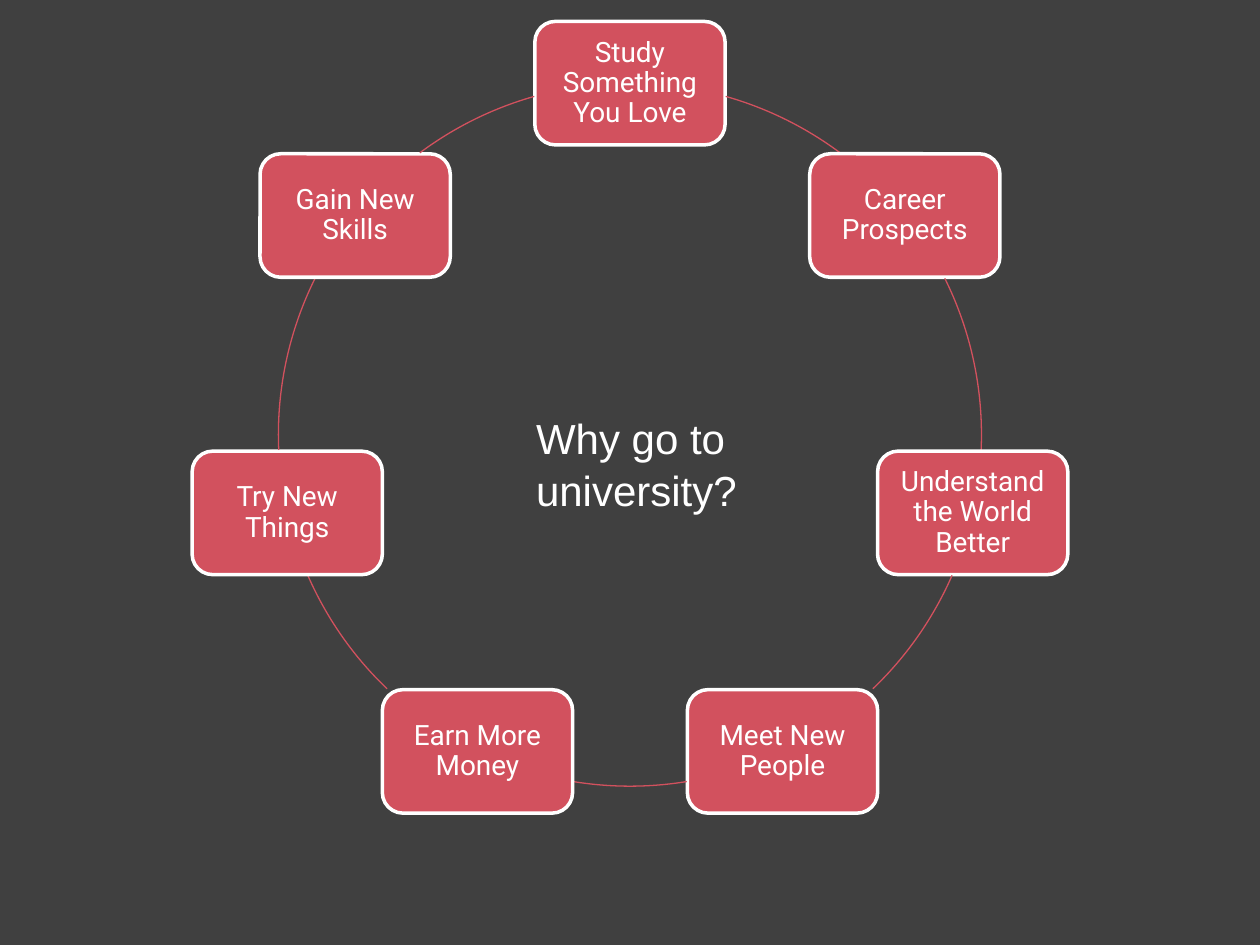
import math

from pptx import Presentation
from pptx import util as u
from pptx.dml.color import RGBColor
from pptx.enum import shapes, text

COLORS = {"back": "404040", "accent": "D2515E", "white": "FFFFFF"}
CENTER_X, CENTER_Y, RADIUS = 5, 3.45, 2.79
BOX_W, BOX_H = 1.51, 0.98
REASONS = [
    "Study Something You Love",
    "Career Prospects",
    "Understand the World Better",
    "Meet New People",
    "Earn More Money",
    "Try New Things",
    "Gain New Skills",
]
RIGHT_ARCS = [(285.8, 306.7), (333.6, 2.5), (23.6, 46.3)]
BOTTOM_ARC = (80.7, 99.3)
LEFT_ARCS = [((180 - b) % 360, (180 - a) % 360) for a, b in reversed(RIGHT_ARCS)]
ARCS = RIGHT_ARCS + [BOTTOM_ARC] + LEFT_ARCS


def color(name):
    return RGBColor.from_string(COLORS[name])


def apply(target, values):
    for name, value in values.items():
        setattr(target, name, value)


class Deck:
    box_font = {"name": "Roboto", "size": u.Pt(16)}
    title_font = {"name": "Arial", "size": u.Pt(24)}

    def __init__(self, width, height):
        self.prs = Presentation()
        apply(self.prs, {"slide_width": u.Inches(width), "slide_height": u.Inches(height)})
        self.s = self.prs.slides.add_slide(self.prs.slide_layouts[6])

    def shape(self, kind, x, y, w, h, fill=None, line=None, weight=0.75):
        sp = self.s.shapes.add_shape(kind, *map(u.Inches, (x, y, w, h)))
        sp.shadow.inherit = False
        if fill:
            sp.fill.solid()
            sp.fill.fore_color.rgb = color(fill)
        else:
            sp.fill.background()
        if line:
            sp.line.color.rgb = color(line)
            sp.line.width = u.Pt(weight)
        else:
            sp.line.fill.background()
        return sp

    def label(self, sp, words, font, spacing, inset, anchor, wrap):
        tf = sp.text_frame
        sides = ("left", "top", "right", "bottom")
        apply(tf, {f"margin_{side}": u.Inches(inset) for side in sides})
        apply(tf, {"word_wrap": wrap, "vertical_anchor": anchor})
        tf.text = words
        p = tf.paragraphs[0]
        apply(p, {"alignment": text.PP_ALIGN.CENTER, "line_spacing": spacing})
        for r in p.runs:
            apply(r.font, font)
            r.font.color.rgb = color("white")

    def box(self, words, x, y):
        sp = self.shape(shapes.MSO_SHAPE.ROUNDED_RECTANGLE, x - BOX_W / 2, y - BOX_H / 2,
                        BOX_W, BOX_H, "accent", "white", 2)
        self.label(sp, words, self.box_font, 0.9, 0.12, text.MSO_ANCHOR.MIDDLE, True)

    def arc(self, start, end):
        sp = self.shape(shapes.MSO_SHAPE.ARC, CENTER_X - RADIUS, CENTER_Y - RADIUS,
                        2 * RADIUS, 2 * RADIUS, line="accent")
        for i, angle in enumerate((start, end)):
            sp.adjustments[i] = angle * 0.6

    def title(self, words, x, y, w, h):
        sp = self.s.shapes.add_textbox(*map(u.Inches, (x, y, w, h)))
        self.label(sp, words, self.title_font, 1.05, 0, text.MSO_ANCHOR.BOTTOM, False)


def main():
    deck = Deck(10, 7.5)
    deck.shape(shapes.MSO_SHAPE.RECTANGLE, 0, 0, 10, 7.5, "back")
    for i, (reason, arc) in enumerate(zip(REASONS, ARCS)):
        turn = 2 * math.pi * i / len(REASONS)
        deck.box(reason, CENTER_X + RADIUS * math.sin(turn), CENTER_Y - RADIUS * math.cos(turn))
        deck.arc(*arc)
    deck.title("Why go to\v university?", 3.39, 2.52, 3.23, 1.57)
    deck.prs.save("out.pptx")


if __name__ == "__main__":
    main()
